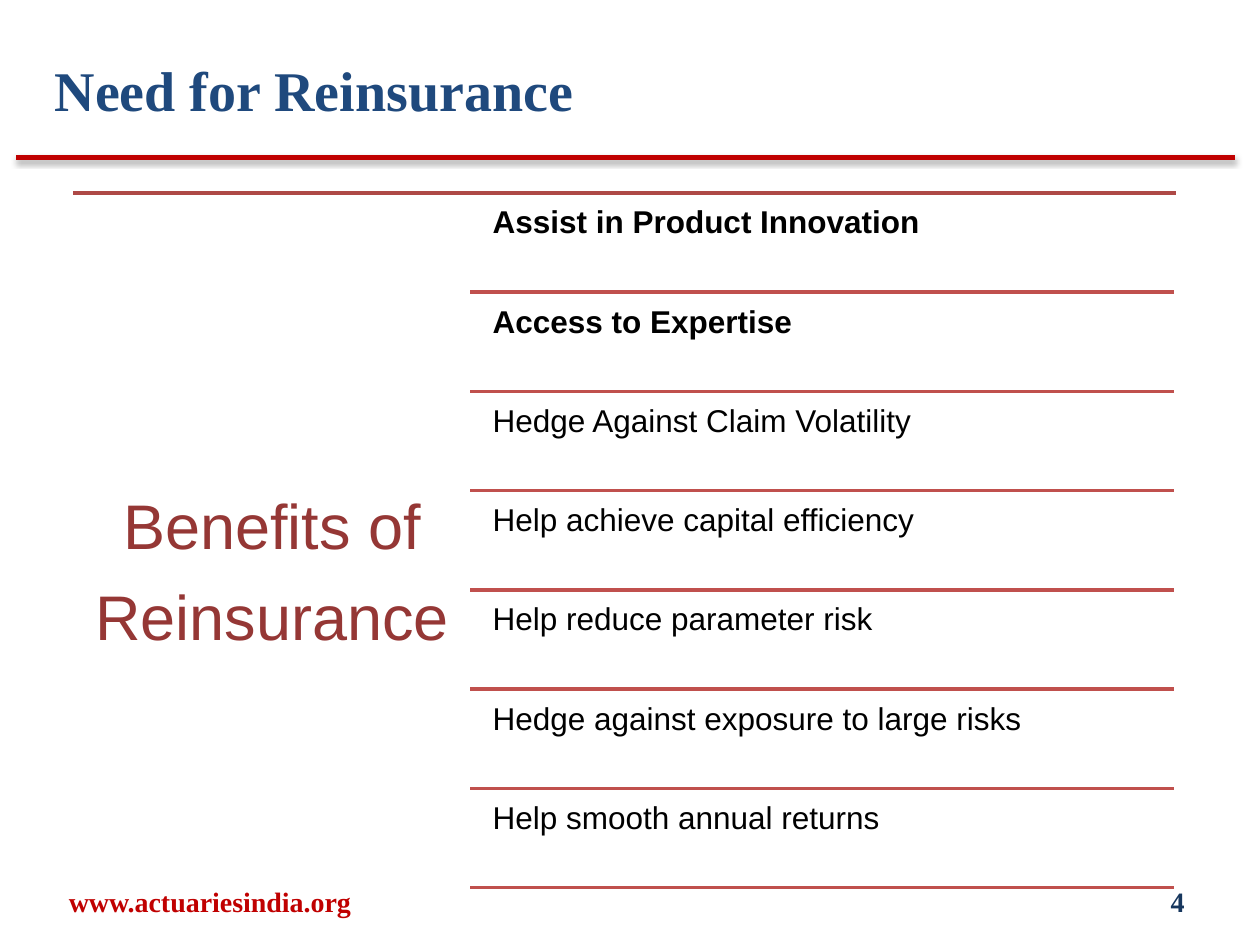
import pptx
import pptx.dml.color
import pptx.enum.shapes
import pptx.enum.text
import pptx.oxml
import pptx.oxml.ns
import pptx.util
from pptx.util import Pt

ALIGN = pptx.enum.text.PP_ALIGN
ANCHOR = pptx.enum.text.MSO_ANCHOR
SERIF, SANS = "Times New Roman", "Arial"

BENEFITS = [
    "Assist in Product Innovation",
    "Access to Expertise",
    "Hedge Against Claim Volatility",
    "Help achieve capital efficiency",
    "Help reduce parameter risk",
    "Hedge against exposure to large risks",
    "Help smooth annual returns",
]
BOLD_ROWS = 2
LIST_TOP = 110.3
ROW_PITCH = 56.7

SHADOW = (
    '<a:outerShdw blurRad="39370" dist="20320" dir="5400000" rotWithShape="0">'
    '<a:srgbClr val="000000"><a:alpha val="38000"/></a:srgbClr></a:outerShdw>'
)


def rgb(value):
    return pptx.dml.color.RGBColor.from_string(value)


def place(sp, left, top, width, height):
    sp.left, sp.top, sp.width, sp.height = Pt(left), Pt(top), Pt(width), Pt(height)


def format_text(sp, lines, size, font, color, bold=False, align=ALIGN.LEFT,
                anchor=ANCHOR.TOP, insets=(7.2, 3.6, 7.2, 3.6), spacing=1.0, after=0):
    """Fill a text shape; insets run left, top, right, bottom."""
    tf = sp.text_frame
    tf.word_wrap = True
    tf.auto_size = pptx.enum.text.MSO_AUTO_SIZE.NONE
    tf.vertical_anchor = anchor
    tf.margin_left, tf.margin_top, tf.margin_right, tf.margin_bottom = map(Pt, insets)
    tf.text = "\n".join(lines)
    for p in tf.paragraphs:
        p.alignment = align
        p.line_spacing = spacing
        p.space_before = Pt(0)
        p.space_after = Pt(after)
        p.font.size = Pt(size)
        p.font.name = font
        p.font.bold = bold
        p.font.color.rgb = rgb(color)


def add_text(s, box, lines, *args, **kwargs):
    sp = s.shapes.add_textbox(0, 0, 0, 0)
    place(sp, *box)
    format_text(sp, lines, *args, **kwargs)


def add_rule(s, left, right, y, color, width, effect=""):
    """Draw a horizontal line, with no shadow unless an effect is given."""
    line = s.shapes.add_connector(
        pptx.enum.shapes.MSO_CONNECTOR.STRAIGHT, Pt(left), Pt(y), Pt(right), Pt(y))
    line.line.color.rgb = rgb(color)
    line.line.width = Pt(width)
    line._element.spPr.append(pptx.oxml.parse_xml(
        f'<a:effectLst {pptx.oxml.ns.nsdecls("a")}>{effect}</a:effectLst>'))


def add_title(s, text):
    place(s.shapes.title, 24, 28, 480, 48)
    format_text(s.shapes.title, [text], 32, SERIF, "1F497D", bold=True)


def add_footer(s, site, number):
    add_text(s, (6, 500.4, 228, 28.8), [site], 16, SERIF, "C00000", bold=True,
             align=ALIGN.CENTER, anchor=ANCHOR.MIDDLE)
    add_text(s, (516, 500.4, 168, 28.8), [number], 16, SERIF, "17375E", bold=True,
             align=ALIGN.RIGHT, anchor=ANCHOR.MIDDLE)


def add_benefits(s):
    add_rule(s, 42, 672, LIST_TOP, "AE4946", 2)
    add_text(s, (42, LIST_TOP, 226.8, 400), ["Benefits of", "Reinsurance"], 36, SANS,
             "953735", align=ALIGN.CENTER, insets=(10.8, 172.5, 10.8, 10.8),
             spacing=0.9, after=13.5)
    for i, benefit in enumerate(BENEFITS):
        top = LIST_TOP + i * ROW_PITCH
        add_text(s, (276.5, top + 2.8, 395.3, 54), [benefit], 18, SANS, "000000",
                 bold=i < BOLD_ROWS, insets=(5.04,) * 4, spacing=0.9)
        add_rule(s, 268.6, 671, top + ROW_PITCH, "C0504D", 2)


def main():
    prs = pptx.Presentation()
    prs.slide_width, prs.slide_height = Pt(720), Pt(540)
    s = prs.slides.add_slide(prs.slide_layouts[5])
    add_rule(s, 9.4, 705.6, 90, "C00000", 3, SHADOW)
    add_title(s, "Need for Reinsurance")
    add_benefits(s)
    add_footer(s, "www.actuariesindia.org", "4")
    prs.save("out.pptx")


if __name__ == "__main__":
    main()
